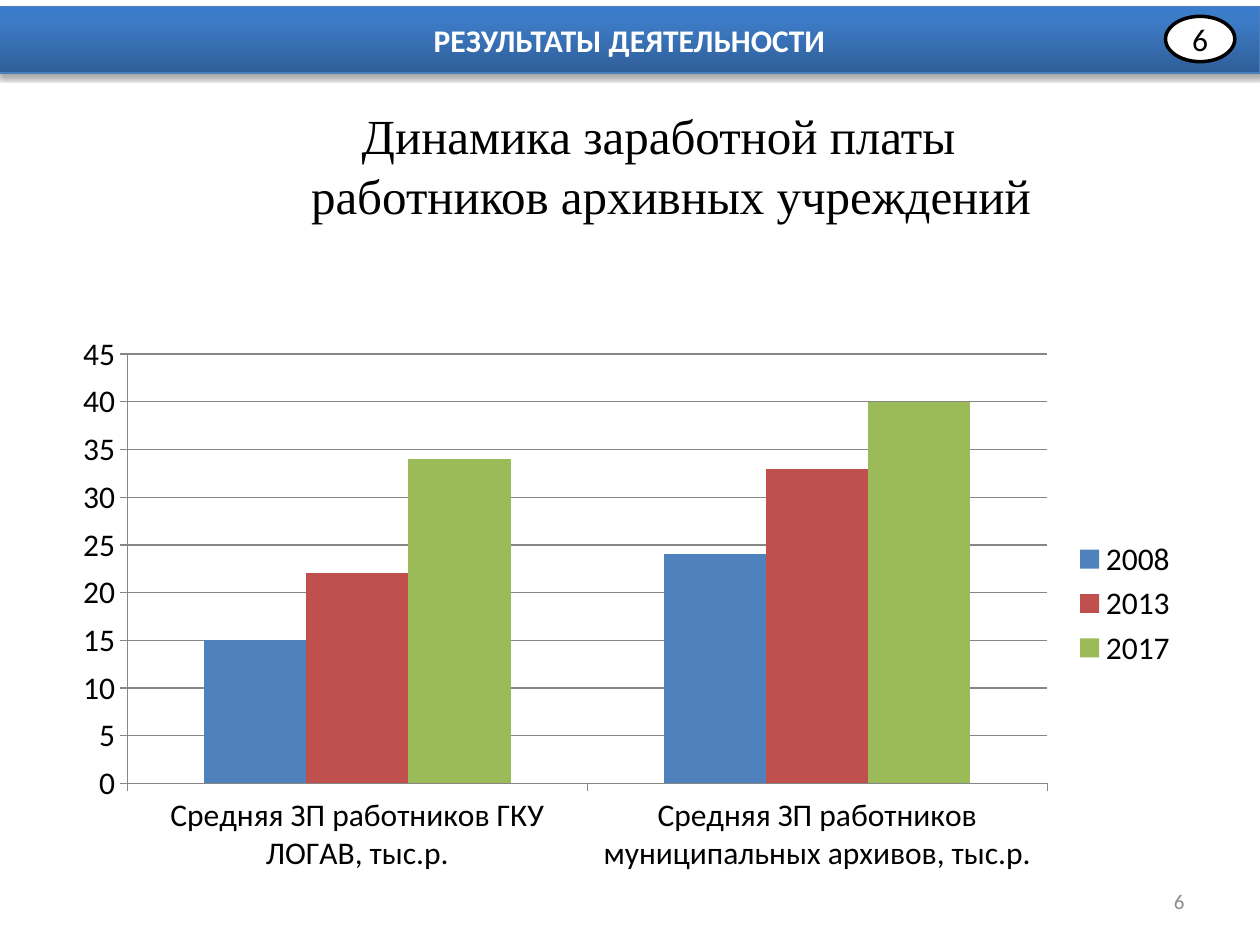
from pptx import Presentation
from pptx.chart.data import CategoryChartData
from pptx.dml.color import RGBColor as RGB
from pptx.enum.chart import XL_CHART_TYPE as ChartType, XL_LEGEND_POSITION as LegendPos, XL_TICK_MARK as Tick
from pptx.enum.shapes import MSO_SHAPE as Shape
from pptx.enum.text import MSO_ANCHOR as Anchor, PP_ALIGN as Align
from pptx.oxml import parse_xml
from pptx.oxml.ns import nsdecls
from pptx.util import Inches, Pt

BANNER = "РЕЗУЛЬТАТЫ ДЕЯТЕЛЬНОСТИ"
PAGE_NUMBER = "6"
TITLE = ["Динамика заработной платы", "работников архивных учреждений"]
CATEGORIES = [
    "Средняя ЗП работников ГКУ ЛОГАВ, тыс.р.",
    "Средняя ЗП работников муниципальных архивов, тыс.р.",
]
WAGES = {"2008": (15, 24), "2013": (22, 33), "2017": (34, 40)}

THEME = {
    "body_font": "Calibri", "title_font": "Times New Roman",
    "body": 18, "title": 28, "footer": 12,
    "black": "000000", "white": "FFFFFF", "muted": "8C8C8C",
    "axis": "868686", "banner_line": "4B7EBC",
    "gradient": [(0, "2F5F99"), (80, "3D7CC7"), (100, "3A7CCB")],
    "series": ["4F81BD", "C0504D", "9BBB59"],
}


def color(name):
    return RGB.from_string(THEME[name])


def style(font, size, color_name, face="body_font", bold=False):
    font.name, font.size, font.bold = THEME[face], Pt(THEME[size]), bold
    font.color.rgb = color(color_name)


def write(shape, lines, size, color_name, align=Align.CENTER, **options):
    """Put one paragraph per line into the shape, centred vertically."""
    frame = shape.text_frame
    frame.word_wrap = True
    frame.vertical_anchor = Anchor.MIDDLE
    for index, line in enumerate(lines):
        para = frame.add_paragraph() if index else frame.paragraphs[0]
        para.alignment = align
        span = para.add_run()
        span.text = line
        style(span.font, size, color_name, **options)
    return frame


def add_outlined(page, kind, place, line_name, width):
    shape = page.shapes.add_shape(kind, *map(Inches, place))
    shape.shadow.inherit = False
    shape.line.color.rgb = color(line_name)
    shape.line.width = Pt(width)
    return shape


def add_banner(page):
    banner = add_outlined(page, Shape.RECTANGLE, (-0.01, 0.05, 10.01, 0.53), "banner_line", 0.75)
    banner.fill.gradient()
    banner.fill.gradient_angle = 90
    stops = banner.element.spPr.find(".//{*}gsLst")
    stops.clear()
    for position, value in THEME["gradient"]:
        stops.append(parse_xml(
            f'<a:gs {nsdecls("a")} pos="{position * 1000}"><a:srgbClr val="{value}"/></a:gs>'))
    banner.element.spPr.find("{*}effectLst").append(parse_xml(
        f'<a:outerShdw {nsdecls("a")} blurRad="{Pt(3.1)}" dist="{Pt(1.8)}" dir="5400000" '
        'rotWithShape="0"><a:srgbClr val="000000"><a:alpha val="35000"/></a:srgbClr></a:outerShdw>'))
    write(banner, [BANNER], "body", "white", bold=True)

    badge = add_outlined(page, Shape.OVAL, (9.25, 0.13, 0.55, 0.36), "black", 2)
    badge.fill.solid()
    badge.fill.fore_color.rgb = color("white")
    frame = write(badge, [PAGE_NUMBER], "body", "black")
    frame.margin_left = frame.margin_right = frame.margin_top = frame.margin_bottom = 0


def add_title(page):
    box = page.shapes.add_textbox(*map(Inches, (1.2, 0.76, 8.25, 1.57)))
    frame = write(box, TITLE, "title", "black", face="title_font")
    frame.margin_bottom = Inches(0.52)
    for para, right_indent in zip(frame.paragraphs, (0.2, 0)):
        properties = para._p.get_or_add_pPr()
        properties.set("marL", "0")
        properties.set("marR", str(Inches(right_indent)))
        properties.set("indent", "0")
    frame.paragraphs[1].space_before = Pt(1)


def add_wage_chart(page):
    data = CategoryChartData()
    data.categories = CATEGORIES
    for year, values in WAGES.items():
        data.add_series(year, values)
    chart = page.shapes.add_chart(
        ChartType.COLUMN_CLUSTERED, *map(Inches, (0.48, 2.57, 8.97, 4.44)), data).chart
    style(chart.font, "body", "black")
    chart.has_title = False
    chart.has_legend = True
    chart.legend.position = LegendPos.RIGHT
    chart.legend.include_in_layout = False

    values_axis = chart.value_axis
    values_axis.minimum_scale, values_axis.maximum_scale, values_axis.major_unit = 0, 45, 5
    values_axis.has_major_gridlines = True
    for axis in (chart.category_axis, values_axis):
        axis.major_tick_mark = Tick.OUTSIDE
    for part in (chart.category_axis, values_axis, values_axis.major_gridlines):
        part.format.line.color.rgb = color("axis")
        part.format.line.width = Pt(0.75)

    plot = chart.plots[0]
    plot.gap_width, plot.overlap, plot.vary_by_categories = 150, 0, False
    for series, value in zip(plot.series, THEME["series"]):
        series.format.fill.solid()
        series.format.fill.fore_color.rgb = RGB.from_string(value)


def main():
    deck = Presentation()
    deck.slide_width, deck.slide_height = Inches(10), Inches(7.5)
    page = deck.slides.add_slide(deck.slide_layouts[6])
    add_banner(page)
    add_title(page)
    add_wage_chart(page)
    footer = page.shapes.add_textbox(*map(Inches, (7.17, 6.95, 2.33, 0.4)))
    write(footer, [PAGE_NUMBER], "footer", "muted", align=Align.RIGHT)
    deck.save("out.pptx")


if __name__ == "__main__":
    main()
